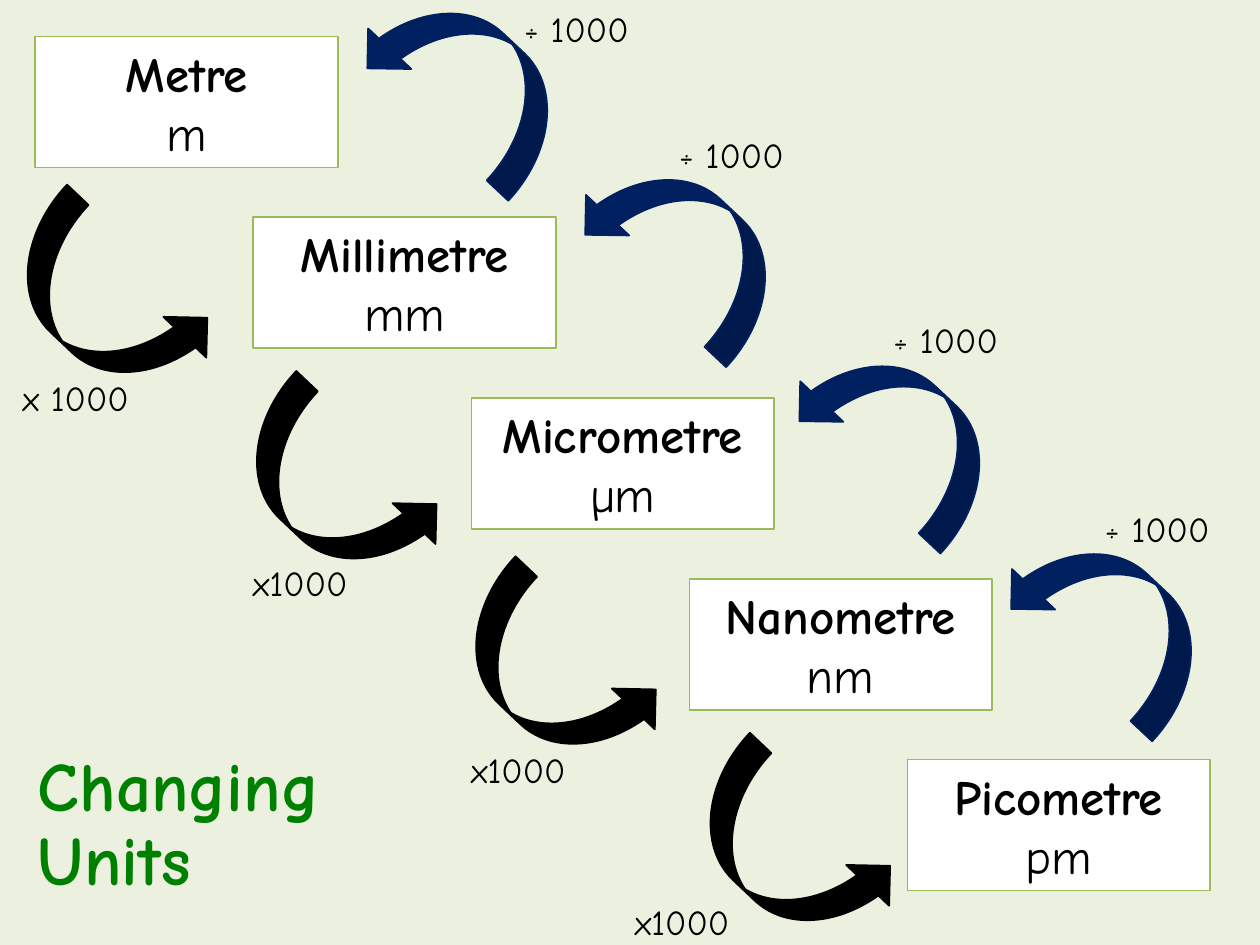
from pptx import Presentation
from pptx.dml.color import RGBColor
from pptx.enum.shapes import MSO_SHAPE
from pptx.enum.text import MSO_ANCHOR, MSO_AUTO_SIZE, PP_ALIGN
from pptx.util import Pt

RECTANGLE = MSO_SHAPE.RECTANGLE
CURVED_ARROW = MSO_SHAPE.CURVED_RIGHT_ARROW
MIDDLE = MSO_ANCHOR.MIDDLE
GROW = MSO_AUTO_SIZE.SHAPE_TO_FIT_TEXT
NO_FIT = MSO_AUTO_SIZE.NONE
LEFT, CENTER = PP_ALIGN.LEFT, PP_ALIGN.CENTER

COLORS = {
    "background": "EBF1DE",
    "box": "FFFFFF",
    "border": "9BBB59",
    "text": "000000",
    "multiply": "000000",
    "divide": "002060",
    "title": "008000",
}
UNITS = [
    ("Metre", "m"),
    ("Millimetre", "mm"),
    ("Micrometre", "µm"),
    ("Nanometre", "nm"),
    ("Picometre", "pm"),
]
BOX_START, BOX_STEP, BOX_SIZE = (20.2, 20.9), (124.6, 103.3), (172.8, 74.9)
ARROW_SIZE = (67.7, 127.4)
LABEL_SIZE = (124.6, 31.7)
MULTIPLY_ANGLE, DIVIDE_ANGLE = 313.5, 133.2
MULTIPLY_STEPS = [
    ((27.4, 110.2), (5.8, 211.7), "x 1000"),
    ((158.4, 216.7), (137.5, 317.5), "x1000"),
    ((283.7, 322.6), (262.1, 424.1), "x1000"),
    ((417.6, 423.4), (355.7, 511.2), "x1000"),
]
DIVIDE_STEPS = [
    ((233.3, -17.3), (292.3, 0.7), "÷ 1000"),
    ((357.8, 77.8), (380.9, 72.7), "÷ 1000"),
    ((480.2, 184.3), (503.3, 178.6), "÷ 1000"),
    ((601.2, 291.6), (624.2, 286.6), "÷ 1000"),
]


class UnitSlide:
    font = "Comic Neue"

    def __init__(self, slide):
        self.slide = slide
        self.paint(slide.background.fill, "background")

    def paint(self, fill, color):
        fill.solid()
        fill.fore_color.rgb = RGBColor.from_string(COLORS[color])

    def format_runs(self, paragraph, size, color="text", bold=False, align=LEFT):
        paragraph.alignment = align
        for run in paragraph.runs:
            run.font.name = self.font
            run.font.size = Pt(size)
            run.font.bold = bold
            run.font.color.rgb = RGBColor.from_string(COLORS[color])

    def shape(self, preset, position, size, fill, line):
        shape = self.slide.shapes.add_shape(preset, *map(Pt, position + size))
        shape.shadow.inherit = False
        self.paint(shape.fill, fill)
        self.paint(shape.line.fill, line)
        shape.line.width = Pt(1)
        return shape

    def title(self, text, position, size):
        title = self.slide.shapes.title
        title.left, title.top, title.width, title.height = map(Pt, position + size)
        frame = title.text_frame
        frame.word_wrap = True
        frame.auto_size = NO_FIT
        frame.vertical_anchor = MIDDLE
        heading = frame.paragraphs[0]
        heading.text = text
        heading.line_spacing = 0.9
        self.format_runs(heading, 39.6, "title", bold=True)

    def unit_box(self, name, symbol, position):
        box = self.shape(RECTANGLE, position, BOX_SIZE, "box", "border")
        frame = box.text_frame
        frame.text = f"{name}\n{symbol}"
        frame.word_wrap = True
        frame.auto_size = GROW
        for paragraph, bold in zip(frame.paragraphs, (True, False)):
            self.format_runs(paragraph, 28, bold=bold, align=CENTER)

    def arrow(self, position, angle, color):
        arrow = self.shape(CURVED_ARROW, position, ARROW_SIZE, color, color)
        arrow.rotation = angle

    def label(self, text, position):
        label = self.slide.shapes.add_textbox(*map(Pt, position + LABEL_SIZE))
        frame = label.text_frame
        frame.text = text
        frame.word_wrap = True
        frame.auto_size = GROW
        self.format_runs(frame.paragraphs[0], 20)

    def conversions(self, steps, angle, color):
        for arrow_position, label_position, factor in steps:
            self.arrow(arrow_position, angle, color)
            self.label(factor, label_position)


def main():
    presentation = Presentation()
    presentation.slide_width, presentation.slide_height = Pt(720), Pt(540)
    title_only = presentation.slide_layouts[5]
    page = UnitSlide(presentation.slides.add_slide(title_only))

    page.title("Changing\nUnits", (14.4, 427), (207.4, 90))
    for index, (name, symbol) in enumerate(UNITS):
        position = tuple(
            start + index * step for start, step in zip(BOX_START, BOX_STEP)
        )
        page.unit_box(name, symbol, position)
    page.conversions(MULTIPLY_STEPS, MULTIPLY_ANGLE, "multiply")
    page.conversions(DIVIDE_STEPS, DIVIDE_ANGLE, "divide")

    presentation.save("out.pptx")


if __name__ == "__main__":
    main()
